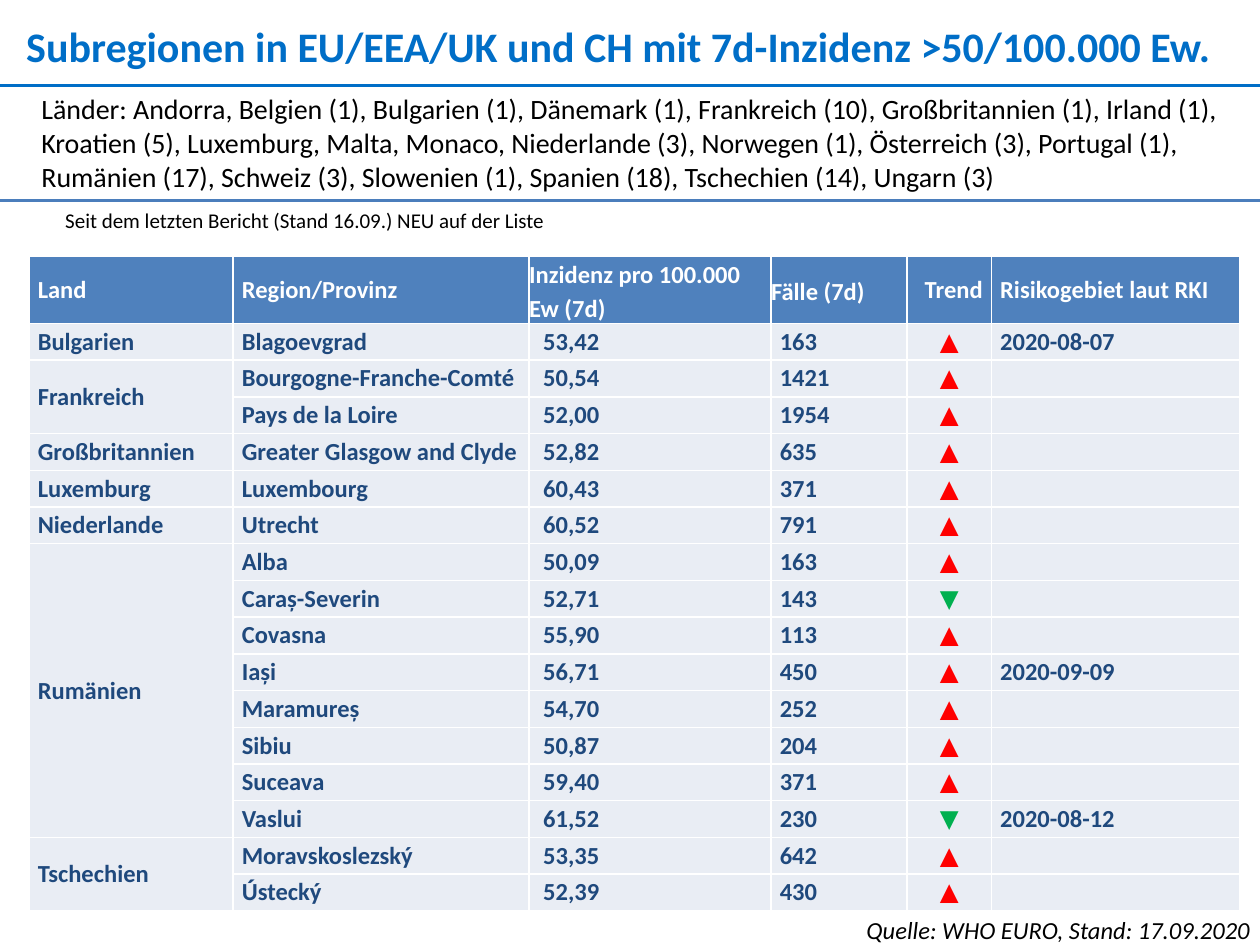
from itertools import groupby

from pptx import Presentation
from pptx.dml.color import RGBColor
from pptx.enum.shapes import MSO_CONNECTOR
from pptx.enum.text import MSO_ANCHOR, MSO_AUTO_SIZE, PP_ALIGN
from pptx.oxml.ns import qn
from pptx.util import Pt

FONT = "Calibri"
COLORS = {
    "title": "006EC7", "divider": "4B7EBC", "black": "000000", "white": "FFFFFF",
    "header": "4F81BD", "body": "E9EDF4", "entry": "1F497D",
    "▲": "FF0000", "▼": "00B050",
}
TITLE = "Subregionen in EU/EEA/UK und CH mit 7d-Inzidenz >50/100.000 Ew."
COUNTRIES = (
    "Länder: Andorra, Belgien (1), Bulgarien (1), Dänemark (1), Frankreich (10), "
    "Großbritannien (1), Irland (1), Kroatien (5), Luxemburg, Malta, Monaco, "
    "Niederlande (3), Norwegen (1), Österreich (3), Portugal (1), Rumänien (17), "
    "Schweiz (3), Slowenien (1), Spanien (18), Tschechien (14), Ungarn (3)"
)
UPDATE = "Seit dem letzten Bericht (Stand 16.09.) NEU auf der Liste"
SOURCE = "Quelle: WHO EURO, Stand: 17.09.2020"
HEADINGS = ["Land", "Region/Provinz", "Inzidenz pro 100.000 Ew (7d)", "Fälle (7d)",
            "Trend", "Risikogebiet laut RKI"]
REGIONS = [
    ("Bulgarien", "Blagoevgrad", "53,42", "163", "▲", "2020-08-07"),
    ("Frankreich", "Bourgogne-Franche-Comté", "50,54", "1421", "▲", ""),
    ("Frankreich", "Pays de la Loire", "52,00", "1954", "▲", ""),
    ("Großbritannien", "Greater Glasgow and Clyde", "52,82", "635", "▲", ""),
    ("Luxemburg", "Luxembourg", "60,43", "371", "▲", ""),
    ("Niederlande", "Utrecht", "60,52", "791", "▲", ""),
    ("Rumänien", "Alba", "50,09", "163", "▲", ""),
    ("Rumänien", "Caraș-Severin", "52,71", "143", "▼", ""),
    ("Rumänien", "Covasna", "55,90", "113", "▲", ""),
    ("Rumänien", "Iași", "56,71", "450", "▲", "2020-09-09"),
    ("Rumänien", "Maramureș", "54,70", "252", "▲", ""),
    ("Rumänien", "Sibiu", "50,87", "204", "▲", ""),
    ("Rumänien", "Suceava", "59,40", "371", "▲", ""),
    ("Rumänien", "Vaslui", "61,52", "230", "▼", "2020-08-12"),
    ("Tschechien", "Moravskoslezský", "53,35", "642", "▲", ""),
    ("Tschechien", "Ústecký", "52,39", "430", "▲", ""),
]
COLUMN_WIDTHS = [116.6, 169.2, 138.2, 77.8, 48.2, 141.9]
HEADER_HEIGHT, ROW_HEIGHT = 35.3, 21
INDENT, VALUE_INDENT = 5, 8


def color(key):
    """Return the named colour."""
    return RGBColor.from_string(COLORS[key])


def format_paragraph(paragraph, size, color_key, bold=False, italic=False, align=PP_ALIGN.LEFT):
    """Set the font and alignment of a paragraph."""
    paragraph.alignment = align
    font = paragraph.font
    font.name, font.size, font.bold, font.italic = FONT, Pt(size), bold, italic
    font.color.rgb = color(color_key)


def add_title(slide, box):
    """Place the headline in the title placeholder."""
    title = slide.shapes.title
    title.left, title.top, title.width, title.height = map(Pt, box)
    frame = title.text_frame
    frame.text = TITLE
    frame.auto_size = MSO_AUTO_SIZE.NONE
    frame.vertical_anchor = MSO_ANCHOR.TOP
    frame.margin_left = frame.margin_top = frame.margin_right = frame.margin_bottom = 0
    format_paragraph(frame.paragraphs[0], 24, "title", bold=True)


def add_note(slide, box, text, size, **style):
    """Place a wrapped line of black text."""
    frame = slide.shapes.add_textbox(*map(Pt, box)).text_frame
    frame.word_wrap = True
    frame.text = text
    format_paragraph(frame.paragraphs[0], size, "black", **style)


def add_divider(slide, left, right, top, color_key, weight):
    """Draw a horizontal rule."""
    rule = slide.shapes.add_connector(MSO_CONNECTOR.STRAIGHT, Pt(left), Pt(top), Pt(right), Pt(top))
    rule.line.color.rgb = color(color_key)
    rule.line.width = Pt(weight)
    properties = rule._element.spPr
    properties.append(properties.makeelement(qn("a:effectLst"), {}))


def fill_cell(cell, text, fill, color_key, indent=INDENT, spacing=2, **style):
    """Write one table cell."""
    cell.fill.solid()
    cell.fill.fore_color.rgb = color(fill)
    cell.vertical_anchor = MSO_ANCHOR.MIDDLE
    cell.margin_left, cell.margin_right = Pt(indent), Pt(min(indent, INDENT))
    cell.margin_top = cell.margin_bottom = 0
    cell.text = text
    paragraph = cell.text_frame.paragraphs[0]
    paragraph.space_before = paragraph.space_after = Pt(spacing)
    format_paragraph(paragraph, 14, color_key, **style)
    return paragraph


def fill_header(table):
    """Write the heading row."""
    for column, heading in enumerate(HEADINGS):
        wide = column in (2, 3)
        align = PP_ALIGN.RIGHT if heading == "Trend" else PP_ALIGN.LEFT
        paragraph = fill_cell(table.cell(0, column), heading, "header", "white", bold=True,
                              indent=0 if wide else INDENT, spacing=0 if wide else 2, align=align)
        if wide:
            paragraph.line_spacing = 1.15


def fill_region(table, row, region):
    """Write the row of one region."""
    for column, entry in enumerate(region):
        cell = table.cell(row, column)
        if entry in ("▲", "▼"):
            fill_cell(cell, entry, "body", entry, spacing=0, align=PP_ALIGN.CENTER)
        elif not cell.is_spanned:
            fill_cell(cell, entry, "body", "entry", bold=True,
                      indent=VALUE_INDENT if column == 2 else INDENT)


def add_region_table(slide, left, top):
    """Build the table of regions, with one merged cell per country."""
    height = HEADER_HEIGHT + ROW_HEIGHT * len(REGIONS)
    table = slide.shapes.add_table(len(REGIONS) + 1, len(HEADINGS), Pt(left), Pt(top),
                                   Pt(sum(COLUMN_WIDTHS)), Pt(height)).table
    for column, width in zip(table.columns, COLUMN_WIDTHS):
        column.width = Pt(width)
    for row in table.rows:
        row.height = Pt(ROW_HEIGHT)
    table.rows[0].height = Pt(HEADER_HEIGHT)
    first = 1
    for _, group in groupby(REGIONS, key=lambda region: region[0]):
        last = first + len(list(group)) - 1
        if last > first:
            table.cell(first, 0).merge(table.cell(last, 0))
        first = last + 1
    fill_header(table)
    for row, region in enumerate(REGIONS, start=1):
        fill_region(table, row, region)


def main():
    """Build and save the slide."""
    deck = Presentation()
    deck.slide_width, deck.slide_height = Pt(720), Pt(540)
    slide = deck.slides.add_slide(deck.slide_layouts[5])
    add_title(slide, (15, 11.5, 693.4, 28.8))
    add_divider(slide, 0, 720, 49, "title", 1.5)
    add_note(slide, (30.2, 115.2, 572.4, 21.6), UPDATE, 12)
    add_note(slide, (16.6, 49, 688.3, 65.5), COUNTRIES, 16)
    add_divider(slide, -1.4, 720, 114.5, "divider", 1.75)
    add_region_table(slide, 16.6, 146.2)
    add_note(slide, (456.5, 519.1, 265, 24.5), SOURCE, 14, italic=True, align=PP_ALIGN.RIGHT)
    deck.save("out.pptx")


if __name__ == "__main__":
    main()
